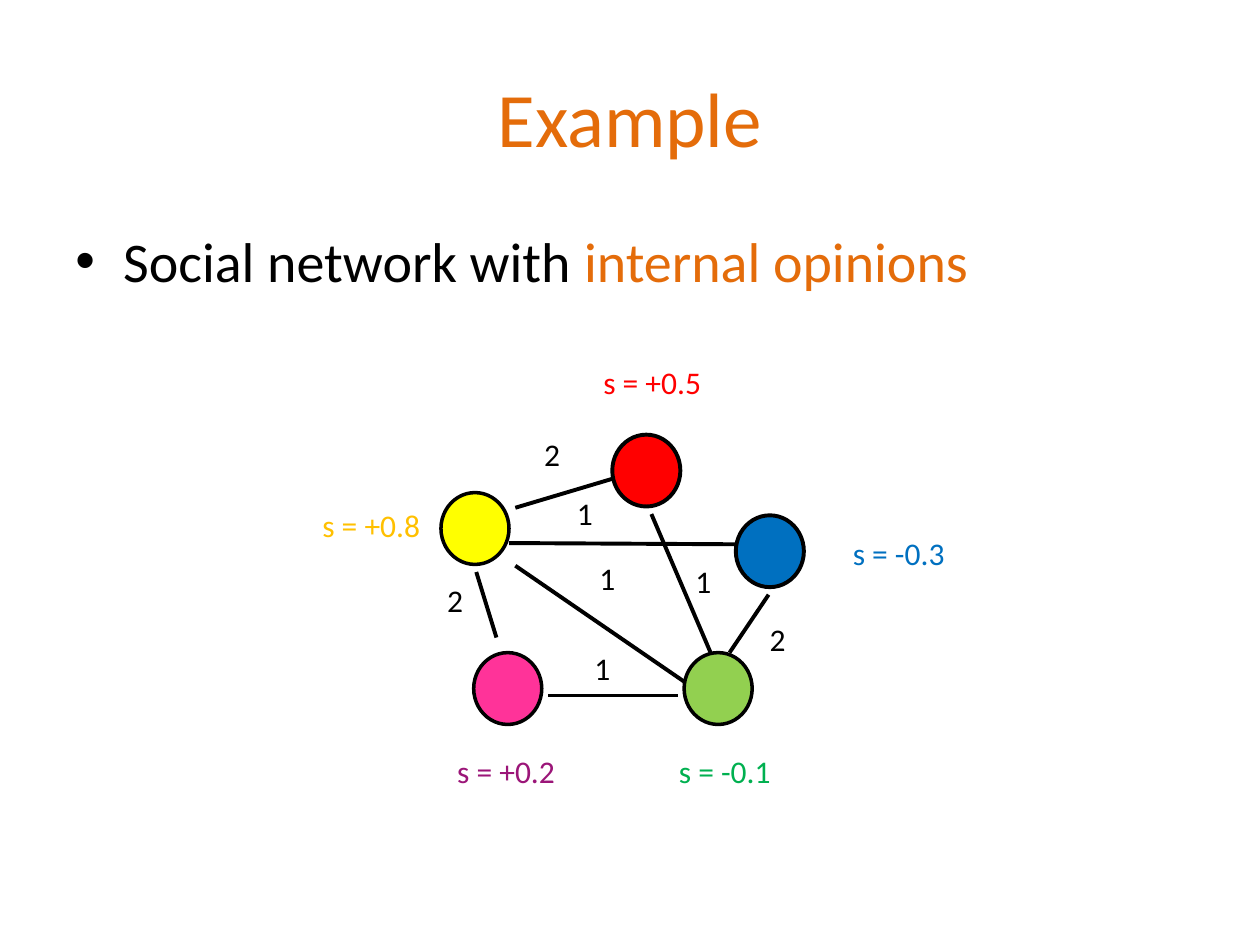
from dataclasses import dataclass

from lxml import etree
from pptx import Presentation
from pptx.dml.color import RGBColor
from pptx.enum import shapes, text
from pptx.oxml.ns import qn
from pptx.util import Inches, Pt


@dataclass(frozen=True)
class Theme:
    font: str = "Calibri"
    accent: str = "E46C0A"
    ink: str = "000000"
    title_size: int = 44
    body_size: int = 32
    label_size: int = 18
    line_width: float = 2.25


THEME = Theme()
NODE_SIZE = (0.54, 0.57)
LABEL_HEIGHT = 0.4
WEIGHT_WIDTH = 0.34
BULLET_INDENT = 0.38

TITLE = [("Example", THEME.accent)]
BODY = [("Social network with ", THEME.ink), ("internal opinions", THEME.accent)]

EDGES = [
    ((4.35, 5.52), (5.38, 5.52)),
    ((3.94, 5.06), (3.78, 4.54)),
    ((4.09, 4.03), (4.86, 3.8)),
    ((4.04, 4.31), (5.84, 4.32)),
    ((5.64, 5.18), (5.17, 4.08)),
    ((5.79, 5.18), (6.1, 4.72)),
    ((5.43, 5.41), (4.09, 4.49)),
]
NODES = [
    ((4.86, 3.45), "FF0000", 2.25),
    ((5.84, 4.09), "0070C0", 2.25),
    ((5.43, 5.18), "92D050", 2),
    ((3.76, 5.18), "FF3399", 2),
    ((3.5, 3.91), "FFFF00", 2),
]
WEIGHTS = [
    ("2", (4.22, 3.4)),
    ("2", (3.45, 4.56)),
    ("1", (4.48, 3.87)),
    ("1", (4.66, 4.39)),
    ("1", (4.62, 5.1)),
    ("2", (6.01, 4.87)),
    ("1", (5.42, 4.41)),
]
OPINIONS = [
    ("s = +0.5", (4.69, 2.83), 1, "FF0000"),
    ("s = -0.3", (6.67, 4.19), 0.94, "0070C0"),
    ("s = -0.1", (5.29, 5.92), 0.94, "00B050"),
    ("s = +0.2", (3.53, 5.92), 0.99, "9B1578"),
    ("s = +0.8", (2.46, 3.97), 0.99, "FFC000"),
]


def add_text(page, spans, at, size, *, align=text.PP_ALIGN.LEFT,
             anchor=text.MSO_ANCHOR.TOP, wrap=False, bullet=None):
    box = page.shapes.add_textbox(*map(Inches, at))
    frame = box.text_frame
    frame.word_wrap = wrap
    frame.vertical_anchor = anchor
    para = frame.paragraphs[0]
    para.alignment = align
    if bullet:
        props = para._p.get_or_add_pPr()
        props.set("marL", str(Inches(BULLET_INDENT)))
        props.set("indent", str(-Inches(BULLET_INDENT)))
        etree.SubElement(props, qn("a:buFont"), typeface="Arial")
        etree.SubElement(props, qn("a:buChar"), char=bullet)
    for words, color in spans:
        span = para.add_run()
        span.text = words
        span.font.name = THEME.font
        span.font.size = Pt(size)
        span.font.color.rgb = RGBColor.from_string(color)


def set_line(shape, width):
    shape.line.color.rgb = RGBColor.from_string(THEME.ink)
    shape.line.width = Pt(width)


def add_edge(page, start, end):
    edge = page.shapes.add_connector(
        shapes.MSO_CONNECTOR.STRAIGHT, *map(Inches, start + end))
    set_line(edge, THEME.line_width)
    etree.SubElement(edge._element.spPr, qn("a:effectLst"))


def add_node(page, corner, color, width):
    node = page.shapes.add_shape(
        shapes.MSO_SHAPE.OVAL, *map(Inches, corner + NODE_SIZE))
    node.shadow.inherit = False
    node.fill.solid()
    node.fill.fore_color.rgb = RGBColor.from_string(color)
    set_line(node, width)


def main():
    deck = Presentation()
    deck.slide_width, deck.slide_height = Inches(10), Inches(7.5)
    page = deck.slides.add_slide(deck.slide_layouts[6])

    add_text(page, TITLE, (0.5, 0.3, 9, 1.25), THEME.title_size, wrap=True,
             align=text.PP_ALIGN.CENTER, anchor=text.MSO_ANCHOR.MIDDLE)
    add_text(page, BODY, (0.5, 1.75, 9, 4.95), THEME.body_size, wrap=True, bullet="•")

    for start, end in EDGES:
        add_edge(page, start, end)
    for corner, color, width in NODES:
        add_node(page, corner, color, width)

    labels = [(words, corner, WEIGHT_WIDTH, THEME.ink) for words, corner in WEIGHTS]
    for words, corner, width, color in labels + OPINIONS:
        add_text(page, [(words, color)], (*corner, width, LABEL_HEIGHT), THEME.label_size)

    deck.save("out.pptx")


if __name__ == "__main__":
    main()
